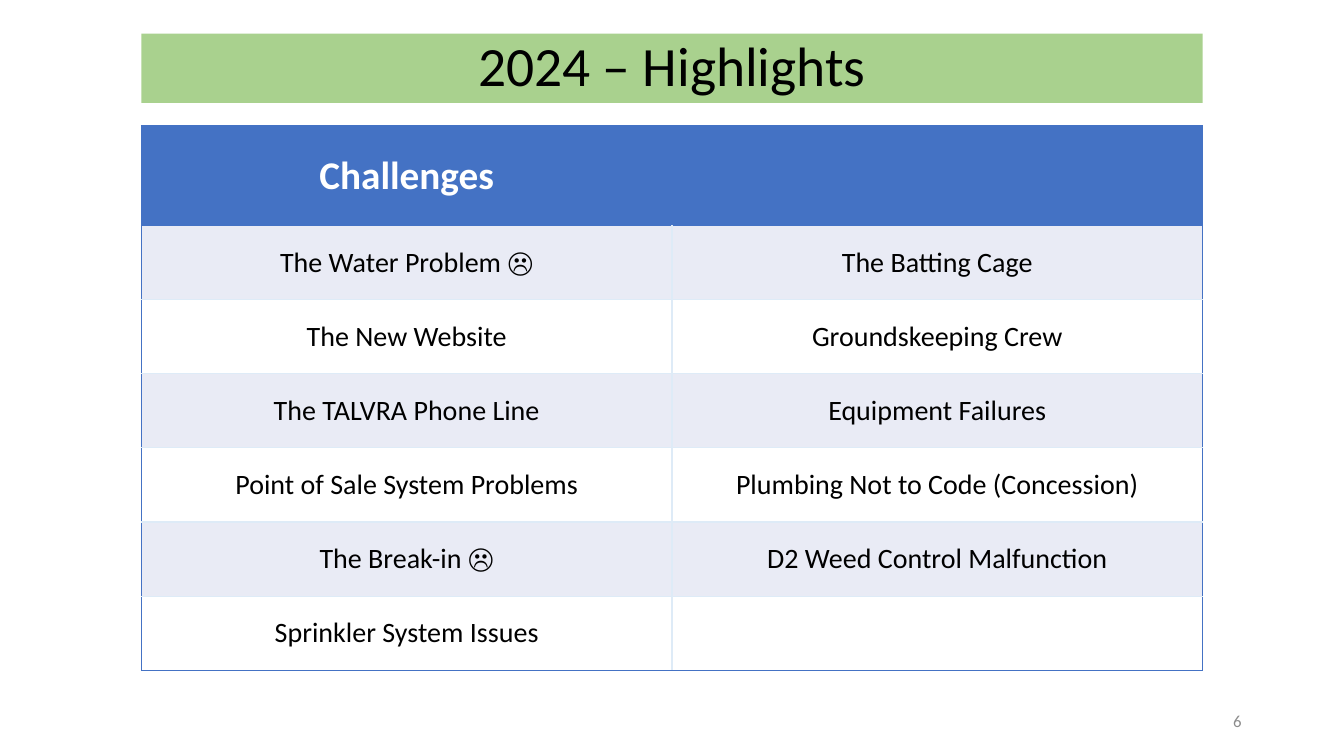
from dataclasses import dataclass

from lxml.etree import SubElement
from pptx import Presentation
from pptx.dml.color import RGBColor
from pptx.enum.text import MSO_ANCHOR, MSO_AUTO_SIZE, PP_ALIGN
from pptx.oxml.ns import qn
from pptx.util import Pt

PX = 6350


@dataclass(frozen=True)
class Theme:
    font: str = "Calibri"
    banner: str = "A9D18E"
    accent: str = "4472C4"
    rule: str = "DEEBF7"
    band: str = "E9EBF5"
    white: str = "FFFFFF"
    ink: str = "000000"
    muted: str = "8C8C8C"
    title_size: float = 39.6
    header_size: int = 28
    body_size: int = 20
    number_size: int = 12


theme = Theme()


def write(frame, text, size, color, align, bold=False):
    frame.text = text
    frame.word_wrap = True
    paragraph = frame.paragraphs[0]
    paragraph.alignment = align
    paragraph.font.name = theme.font
    paragraph.font.size = Pt(size)
    paragraph.font.bold = bold
    paragraph.font.color.rgb = RGBColor.from_string(color)
    return paragraph


def add_border(cell, side, color):
    line = SubElement(cell._tc.get_or_add_tcPr(), qn(f"a:ln{side}"), w=str(Pt(1)))
    fill = SubElement(line, qn("a:solidFill"))
    SubElement(fill, qn("a:srgbClr"), val=color)


presentation = Presentation()
presentation.slide_width = 1920 * PX
presentation.slide_height = 1080 * PX
slide = presentation.slides.add_slide(presentation.slide_layouts[5])

left, width = 202 * PX, 1516 * PX

title = slide.shapes.title
title.left, title.top, title.width, title.height = left, 48 * PX, width, 99 * PX
title.fill.solid()
title.fill.fore_color.rgb = RGBColor.from_string(theme.banner)
heading = write(title.text_frame, "2024 – Highlights", theme.title_size, theme.ink, PP_ALIGN.CENTER)
heading.line_spacing = 0.9
title.text_frame.auto_size = MSO_AUTO_SIZE.NONE
title.text_frame.vertical_anchor = MSO_ANCHOR.MIDDLE

challenges = [
    ("Challenges", ""),
    ("The Water Problem ☹", "The Batting Cage"),
    ("The New Website", "Groundskeeping Crew"),
    ("The TALVRA Phone Line", "Equipment Failures"),
    ("Point of Sale System Problems", "Plumbing Not to Code (Concession)"),
    ("The Break-in ☹", "D2 Weed Control Malfunction"),
    ("Sprinkler System Issues", ""),
]
header_height, row_height = 142 * PX, 106 * PX
last_row = len(challenges) - 1
table = slide.shapes.add_table(
    len(challenges), 2, left, 180 * PX, width, header_height + last_row * row_height
).table
table.horz_banding = False

for row, entries in enumerate(challenges):
    is_header = row == 0
    table.rows[row].height = header_height if is_header else row_height
    for column, entry in enumerate(entries):
        cell = table.cell(row, column)
        outer_sides = {
            "L": is_header or column == 0,
            "R": is_header or column == 1,
            "T": row <= 1,
            "B": is_header or row == last_row,
        }
        for side, is_outer in outer_sides.items():
            add_border(cell, side, theme.accent if is_outer else theme.rule)
        background = theme.accent if is_header else theme.band if row % 2 else theme.white
        cell.fill.solid()
        cell.fill.fore_color.rgb = RGBColor.from_string(background)
        cell.vertical_anchor = MSO_ANCHOR.MIDDLE
        write(
            cell.text_frame,
            entry,
            theme.header_size if is_header else theme.body_size,
            theme.white if is_header else theme.ink,
            PP_ALIGN.CENTER,
            bold=is_header,
        )

page_number = slide.shapes.add_textbox(1356 * PX, 1001 * PX, 432 * PX, 58 * PX)
write(page_number.text_frame, "6", theme.number_size, theme.muted, PP_ALIGN.RIGHT)
page_number.text_frame.vertical_anchor = MSO_ANCHOR.MIDDLE

presentation.save("out.pptx")
